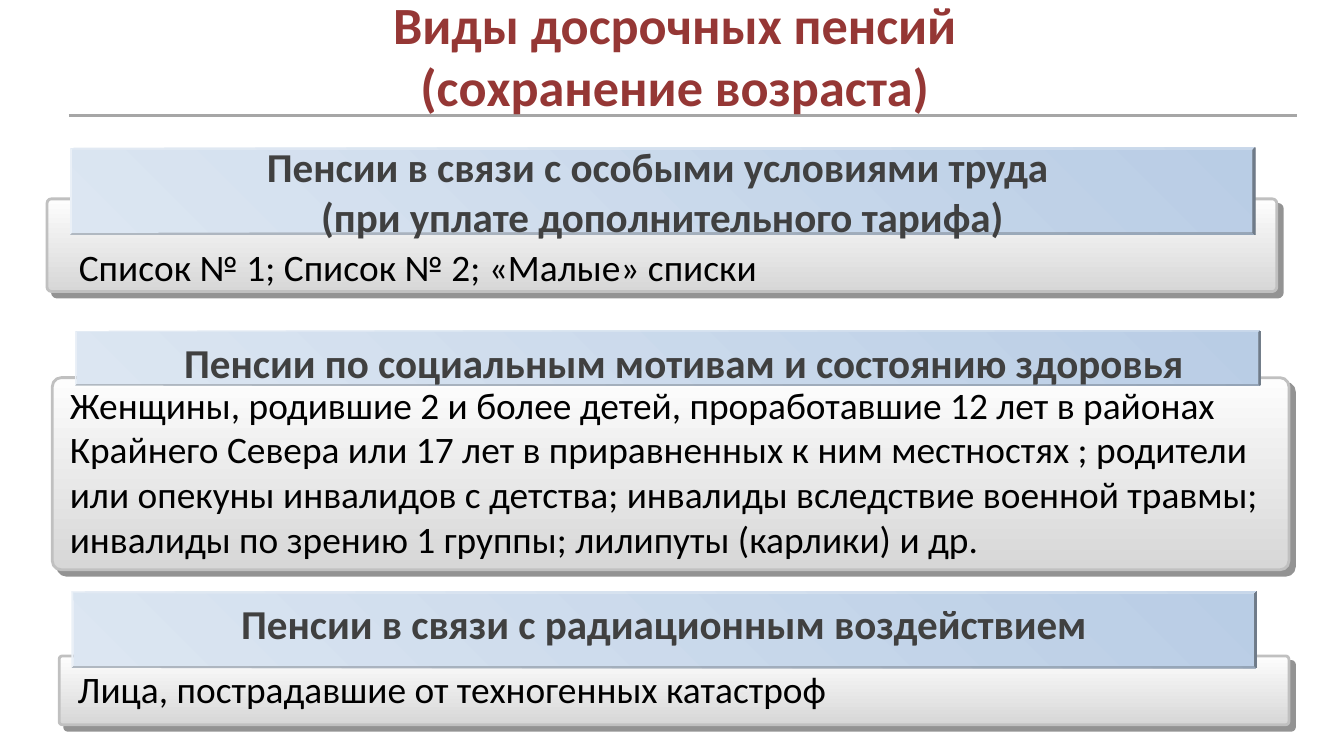
from lxml import etree
from pptx import Presentation
from pptx.dml.color import RGBColor
from pptx.enum.shapes import MSO_CONNECTOR, MSO_SHAPE
from pptx.enum.text import MSO_ANCHOR, MSO_AUTO_SIZE, PP_ALIGN
from pptx.oxml.ns import qn
from pptx.util import Cm, Pt

ROUND, BEVEL = MSO_SHAPE.ROUNDED_RECTANGLE, MSO_SHAPE.BEVEL
STRAIGHT = MSO_CONNECTOR.STRAIGHT
MIDDLE = MSO_ANCHOR.MIDDLE
GROW = MSO_AUTO_SIZE.SHAPE_TO_FIT_TEXT
LEFT, CENTER = PP_ALIGN.LEFT, PP_ALIGN.CENTER

TITLE = ["Виды досрочных пенсий", "(сохранение возраста)"]
TITLE_BOX = (0.05, -0.28, 25.4, 2.64)

# Boxes are left, top, width, height in cm; without a label box
# the heading is written in the banner itself.
GROUPS = [
    dict(
        panel=(0.89, 3.76, 23.24, 1.75),
        banner=(1.32, 2.79, 22.4, 1.65),
        label=None,
        head="Пенсии в связи с особыми условиями труда \n"
             "(при уплате дополнительного тарифа)",
        area=(1.24, 4.5, 22.45, 1.12),
        body="Список № 1; Список № 2; «Малые» списки",
    ),
    dict(
        panel=(0.99, 7.14, 23.37, 3.63),
        banner=(1.42, 6.25, 22.4, 1.04),
        label=(0.56, 6.25, 24.74, 1.19),
        head="Пенсии по социальным мотивам и состоянию здоровья",
        area=(1.07, 7.09, 23.22, 3.68),
        body="Женщины, родившие 2 и более детей, проработавшие 12 лет "
             "в районах Крайнего Севера или 17 лет в приравненных к ним "
             "местностях ; родители или опекуны инвалидов с детства; "
             "инвалиды вследствие военной травмы; инвалиды по зрению "
             "1 группы; лилипуты (карлики) и др.",
    ),
    dict(
        panel=(1.12, 12.4, 23.24, 1.3),
        banner=(1.35, 11.18, 22.4, 1.45),
        label=(1.35, 11.18, 22.4, 1.19),
        head="Пенсии в связи с радиационным воздействием",
        area=(1.22, 12.47, 22.63, 1.12),
        body="Лица, пострадавшие от техногенных катастроф",
    ),
]


def color(code):
    return RGBColor.from_string(code)


def place(box):
    return [Cm(n) for n in box]


def write(frame, texts, size, code, bold=True, align=CENTER):
    frame.word_wrap = True
    for i, text in enumerate(texts):
        para = frame.add_paragraph() if i else frame.paragraphs[0]
        para.text = text
        para.alignment = align
        font = para.font
        font.name, font.size, font.bold = "Calibri", Pt(size), bold
        font.color.rgb = color(code)


def add_text(slide, box, *args, **style):
    frame = slide.shapes.add_textbox(*place(box)).text_frame
    write(frame, *args, **style)
    frame.auto_size = GROW


def add_block(slide, kind, box, adj, codes, angle):
    """Add a shape with a two-colour gradient and no outline."""
    shape = slide.shapes.add_shape(kind, *place(box))
    shape.adjustments[0] = adj
    shape.shadow.inherit = False
    shape.fill.gradient()
    shape.fill.gradient_angle = angle
    for stop, code in zip(shape.fill.gradient_stops, codes):
        stop.color.rgb = color(code)
    shape.line.fill.background()
    return shape


def cast_shadow(shape):
    effects = shape.element.spPr.find(qn("a:effectLst"))
    outer = etree.SubElement(effects, qn("a:outerShdw"), blurRad="0",
                             dist=str(Pt(4.2)), dir="2700000",
                             algn="ctr", rotWithShape="0")
    tint = etree.SubElement(outer, qn("a:srgbClr"), val="292929")
    etree.SubElement(tint, qn("a:alpha"), val="50000")


def add_panel(slide, box):
    panel = add_block(slide, ROUND, box, 0.046, ("FDFDFD", "D7D7D7"), 270)
    panel.line.color.rgb = color("C0C0C0")
    panel.line.width = Pt(1.5)
    cast_shadow(panel)


def add_group(slide, panel, banner, label, head, area, body):
    add_panel(slide, panel)
    block = add_block(slide, BEVEL, banner, 0.025, ("DCE6F2", "B9CDE5"), 45)
    if label:
        add_text(slide, label, [head], 22, "404040")
    else:
        block.text_frame.vertical_anchor = MIDDLE
        write(block.text_frame, [head], 22, "404040")
    add_text(slide, area, [body], 20, "000000", bold=False, align=LEFT)


def add_rule(slide, left, right, top):
    rule = slide.shapes.add_connector(STRAIGHT, Cm(left), Cm(top),
                                      Cm(right), Cm(top))
    rule.line.color.rgb = color("A6A6A6")
    rule.line.width = Pt(1.5)
    etree.SubElement(rule.element.spPr, qn("a:effectLst"))


def main():
    deck = Presentation()
    deck.slide_width, deck.slide_height = Cm(25.4), Cm(14.29)
    slide = deck.slides.add_slide(deck.slide_layouts[6])
    add_rule(slide, 1.3, 24.51, 2.18)
    add_text(slide, TITLE_BOX, TITLE, 28, "953735")
    for group in GROUPS:
        add_group(slide, **group)
    deck.save("out.pptx")


if __name__ == "__main__":
    main()
